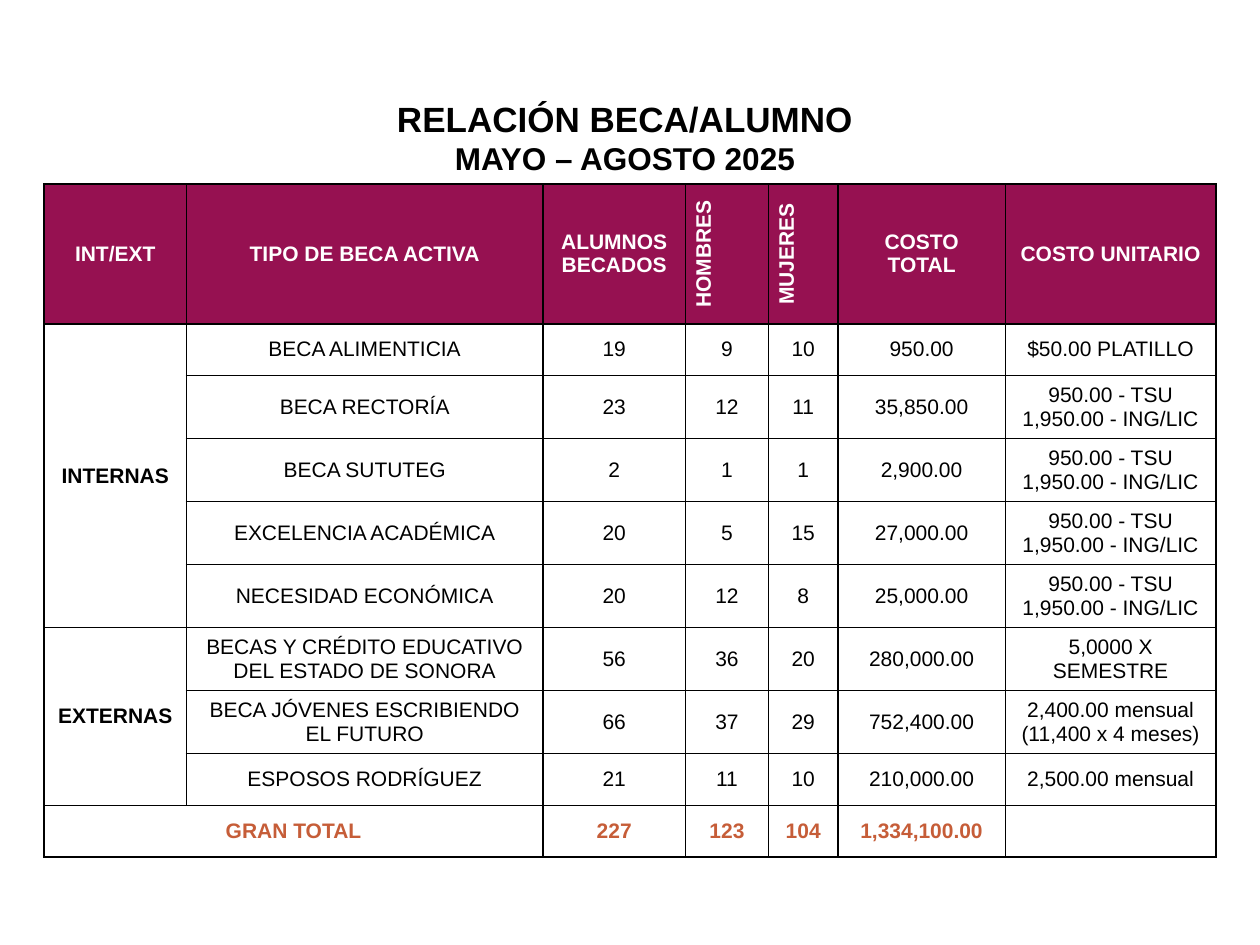
from typing import NamedTuple

from lxml.etree import SubElement
from pptx import Presentation
from pptx.dml.color import RGBColor
from pptx.enum.text import MSO_ANCHOR as Anchor, MSO_AUTO_SIZE as AutoSize, PP_ALIGN as Align
from pptx.oxml.ns import qn
from pptx.util import Inches, Pt

FONT = "Arial"
BLACK, WHITE, MAROON, ORANGE = "000000", "FFFFFF", "961151", "C65D38"
COLUMN_WIDTHS = [1.13, 2.83, 1.13, 0.66, 0.55, 1.33, 1.67]
HEADER_HEIGHT, ROW_HEIGHT = 1.11, 0.41
HEADERS = ["INT/EXT", "TIPO DE BECA ACTIVA", "ALUMNOS BECADOS", "HOMBRES",
           "MUJERES", "COSTO TOTAL", "COSTO UNITARIO"]
VERTICAL_HEADERS = {"HOMBRES", "MUJERES"}
UNIT_COST = "950.00 - TSU\n1,950.00 - ING/LIC"


class Scholarship(NamedTuple):
    name: str
    students: str
    men: str
    women: str
    total: str
    unit: str = UNIT_COST


GROUPS = {
    "INTERNAS": [
        Scholarship("BECA ALIMENTICIA", "19", "9", "10", "950.00", "$50.00 PLATILLO"),
        Scholarship("BECA RECTORÍA", "23", "12", "11", "35,850.00"),
        Scholarship("BECA SUTUTEG", "2", "1", "1", "2,900.00"),
        Scholarship("EXCELENCIA ACADÉMICA", "20", "5", "15", "27,000.00"),
        Scholarship("NECESIDAD ECONÓMICA", "20", "12", "8", "25,000.00"),
    ],
    "EXTERNAS": [
        Scholarship("BECAS Y CRÉDITO EDUCATIVO DEL ESTADO DE SONORA",
                    "56", "36", "20", "280,000.00", "5,0000 X SEMESTRE"),
        Scholarship("BECA JÓVENES ESCRIBIENDO EL FUTURO",
                    "66", "37", "29", "752,400.00", "2,400.00 mensual (11,400 x 4 meses)"),
        Scholarship("ESPOSOS RODRÍGUEZ", "21", "11", "10", "210,000.00", "2,500.00 mensual"),
    ],
}
TOTALS = ["GRAN TOTAL", "", "227", "123", "104", "1,334,100.00", ""]


def color(value: str) -> RGBColor:
    return RGBColor.from_string(value)


def format_paragraph(paragraph, size: float, text_color: str, bold: bool) -> None:
    paragraph.alignment = Align.CENTER
    font = paragraph.font
    font.name, font.size, font.bold = FONT, Pt(size), bold
    font.color.rgb = color(text_color)


def add_borders(cell) -> None:
    properties = cell._tc.get_or_add_tcPr()
    for side in ("a:lnL", "a:lnR", "a:lnT", "a:lnB"):
        line = SubElement(properties, qn(side), w=str(Pt(1)))
        fill = SubElement(line, qn("a:solidFill"))
        SubElement(fill, qn("a:srgbClr"), val=BLACK)


def write_cell(cell, text: str, text_color: str = BLACK, bold: bool = False) -> None:
    cell.text = text
    cell.vertical_anchor = Anchor.MIDDLE
    for paragraph in cell.text_frame.paragraphs:
        format_paragraph(paragraph, 12, text_color, bold)


def add_title(slide) -> None:
    title = slide.shapes.title
    title.left, title.top = Inches(1.97), Inches(0.72)
    title.width, title.height = Inches(5.98), Inches(0.74)
    frame = title.text_frame
    frame.text = "RELACIÓN BECA/ALUMNO\nMAYO – AGOSTO 2025"
    frame.word_wrap = True
    frame.auto_size = AutoSize.SHAPE_TO_FIT_TEXT
    frame.vertical_anchor = Anchor.TOP
    for paragraph, size in zip(frame.paragraphs, (20, 18)):
        format_paragraph(paragraph, size, BLACK, True)


def add_scholarship_table(slide) -> None:
    row_count = 2 + sum(len(group) for group in GROUPS.values())
    height = HEADER_HEIGHT + (row_count - 1) * ROW_HEIGHT
    table = slide.shapes.add_table(
        row_count, len(HEADERS), Inches(0.35), Inches(1.46),
        Inches(sum(COLUMN_WIDTHS)), Inches(height)).table
    table.first_row = table.horz_banding = False
    for column, width in zip(table.columns, COLUMN_WIDTHS):
        column.width = Inches(width)
    for index, row in enumerate(table.rows):
        row.height = Inches(ROW_HEIGHT if index else HEADER_HEIGHT)
    for cell in table.iter_cells():
        add_borders(cell)
        cell.fill.background()

    # Header row
    for column, text in enumerate(HEADERS):
        cell = table.cell(0, column)
        write_cell(cell, text, WHITE, True)
        cell.fill.solid()
        cell.fill.fore_color.rgb = color(MAROON)
        if text in VERTICAL_HEADERS:
            cell._tc.tcPr.set("vert", "vert270")

    # Scholarships, with one merged label per group
    row = 1
    for label, scholarships in GROUPS.items():
        group_cell = table.cell(row, 0)
        group_cell.merge(table.cell(row + len(scholarships) - 1, 0))
        write_cell(group_cell, label, bold=True)
        for scholarship in scholarships:
            for column, text in enumerate(scholarship, 1):
                write_cell(table.cell(row, column), text)
            row += 1

    # Grand total row
    for column, text in enumerate(TOTALS):
        write_cell(table.cell(row, column), text, ORANGE, True)
    table.cell(row, 0).merge(table.cell(row, 1))


def main() -> None:
    presentation = Presentation()
    presentation.slide_width, presentation.slide_height = Inches(10), Inches(7.5)
    slide = presentation.slides.add_slide(presentation.slide_layouts[5])
    add_title(slide)
    add_scholarship_table(slide)
    presentation.save("out.pptx")


if __name__ == "__main__":
    main()
